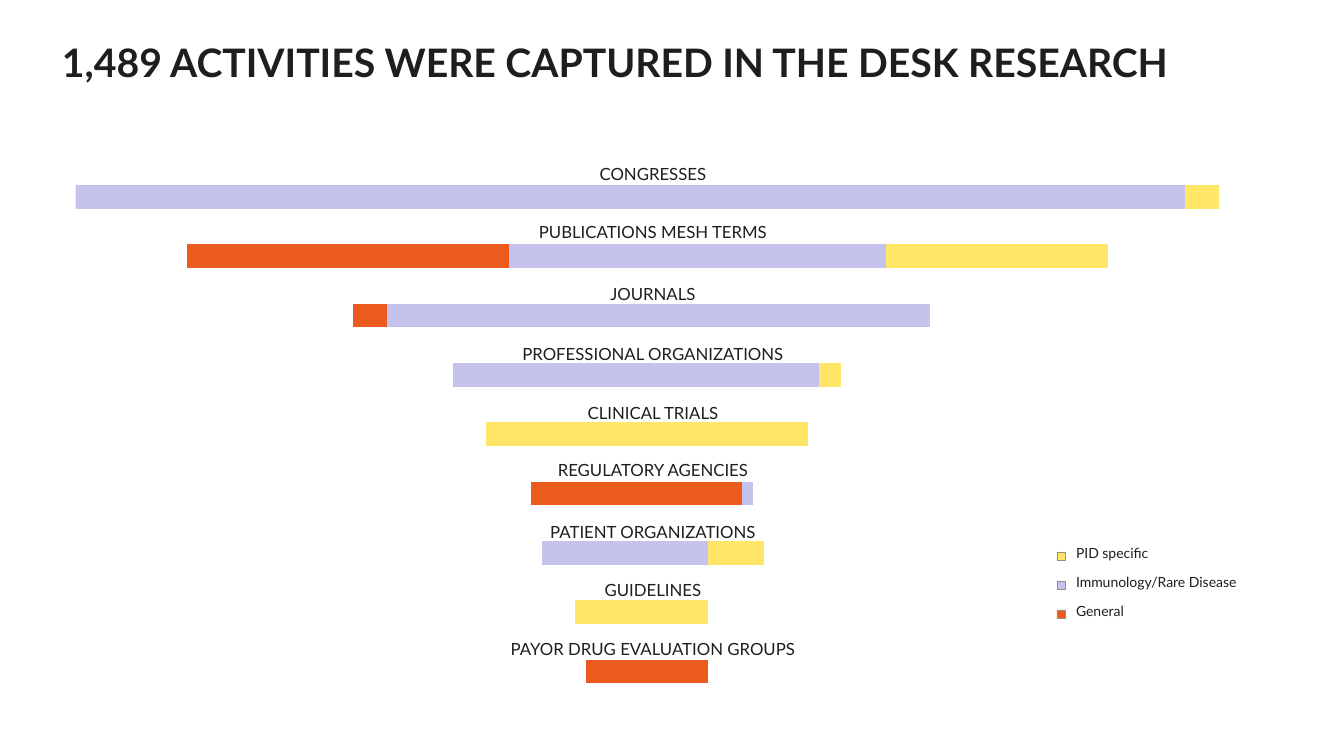
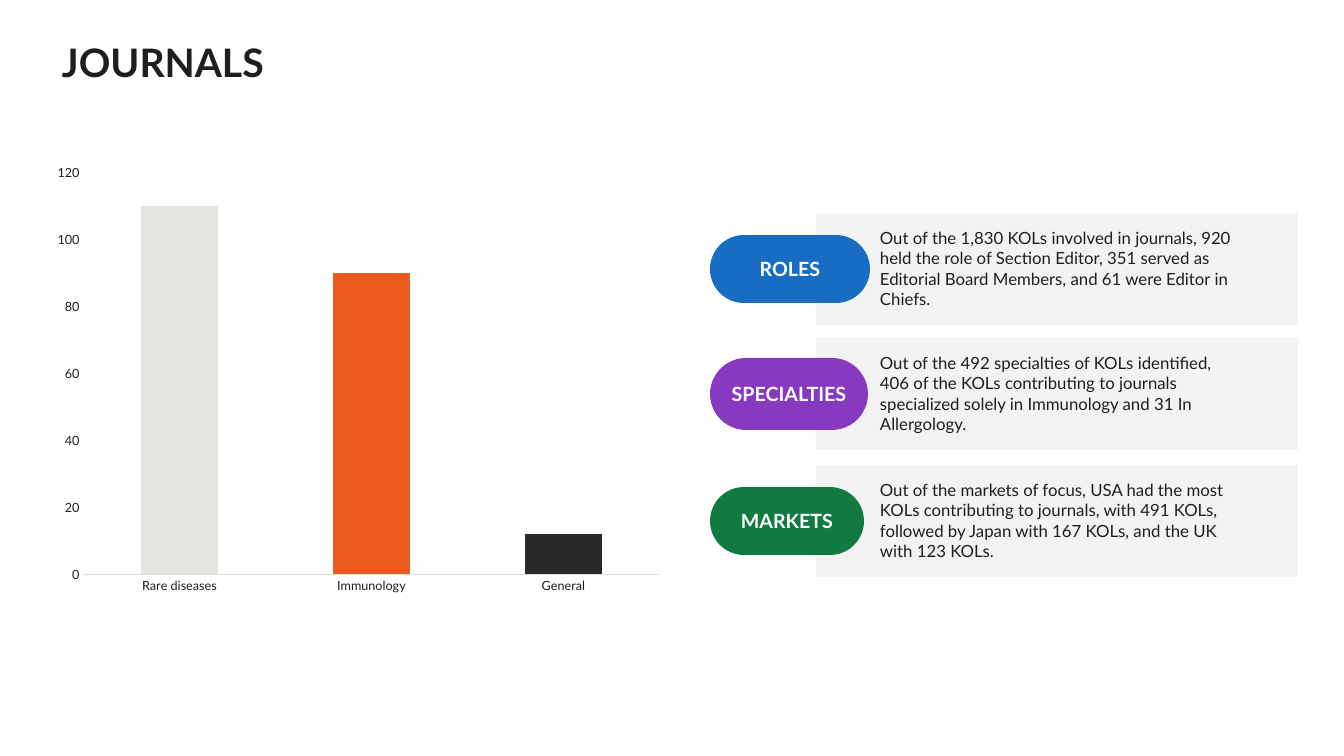
import pptx
import pptx.chart.data
import pptx.dml.color
import pptx.enum.chart
import pptx.enum.shapes
import pptx.enum.text
import pptx.oxml
import pptx.util

RGB = pptx.dml.color.RGBColor
INK = RGB(0x1E, 0x1E, 0x1C)
WHITE = RGB(0xFF, 0xFF, 0xFF)
ORANGE = RGB(0xEB, 0x5B, 0x1D)
LILAC = RGB(0xC5, 0xC3, 0xEE)
YELLOW = RGB(0xFF, 0xE6, 0x67)
STONE = RGB(0xE5, 0xE3, 0xDE)
COAL = RGB(0x29, 0x29, 0x29)
RULE = RGB(0xDE, 0xDE, 0xDC)
EDGE = RGB(0x91, 0x91, 0x8A)
CARD = RGB(0xF3, 0xF3, 0xF3)
BLUE = RGB(0x18, 0x6D, 0xC3)
PURPLE = RGB(0x87, 0x3A, 0xC0)
GREEN = RGB(0x10, 0x7A, 0x40)

FONT = "Lato"
PX = 914400 / 100.8
Pt = pptx.util.Pt
SHAPE = pptx.enum.shapes.MSO_SHAPE
KIND = pptx.enum.chart.XL_CHART_TYPE
TICK = pptx.enum.chart.XL_TICK_MARK
LEFT = pptx.enum.text.PP_ALIGN.LEFT
MID = pptx.enum.text.PP_ALIGN.CENTER


def add(slide, at, kind=None, fill=None):
    """Add a plain shape, or a text box when no kind is given; at is in px."""
    at = [round(n * PX) for n in at]
    if kind is None:
        return slide.shapes.add_textbox(*at)
    shape = slide.shapes.add_shape(kind, *at)
    shape.shadow.inherit = False
    shape.fill.solid()
    shape.fill.fore_color.rgb = fill
    shape.line.fill.background()
    return shape


def write(shape, text, size, color=INK, bold=False, align=LEFT, inset=(0, 0), middle=True):
    """Write one paragraph; inset is (sides, top and bottom) in px."""
    frame = shape.text_frame
    frame.word_wrap = True
    frame.margin_left = frame.margin_right = round(inset[0] * PX)
    frame.margin_top = frame.margin_bottom = round(inset[1] * PX)
    anchor = pptx.enum.text.MSO_ANCHOR
    frame.vertical_anchor = anchor.MIDDLE if middle else anchor.TOP
    para = frame.paragraphs[0]
    para.alignment = align
    run = para.add_run()
    run.text = text
    run.font.name, run.font.size, run.font.bold = FONT, Pt(size), bold
    run.font.color.rgb = color
    return para


deck = pptx.Presentation()
deck.slide_width, deck.slide_height = round(1344 * PX), round(756 * PX)

# Charts and titles, the same way on both slides
# label, middle of label, general, immunology, PID, blank on each side
rows = [
    ("CONGRESSES", 174, 0, 100, 3, 0),
    ("PUBLICATIONS MESH TERMS", 232, 29, 34, 20, 10),
    ("JOURNALS", 294, 3, 49, 0, 25),
    ("PROFESSIONAL ORGANIZATIONS", 354, 0, 33, 2, 34),
    ("CLINICAL TRIALS", 413, 0, 0, 29, 37),
    ("REGULATORY AGENCIES", 470, 19, 1, 0, 41),
    ("PATIENT ORGANIZATIONS", 532, 0, 15, 5, 42),
    ("GUIDELINES", 590, 0, 0, 12, 45),
    ("PAYOR DRUG EVALUATION GROUPS", 649, 11, 0, 0, 46),
]
funnel = [[row[col] for row in reversed(rows)] for col in (5, 2, 3, 4, 5)]
pages = [
    ("1,489 ACTIVITIES WERE CAPTURED IN THE DESK RESEARCH", KIND.BAR_STACKED,
     (62, 156, 1266, 582), [str(n + 1) for n in range(len(rows))], funnel,
     [WHITE, ORANGE, LILAC, YELLOW, WHITE], 110),
    ("JOURNALS", KIND.COLUMN_STACKED, (45, 156, 627, 447),
     ["Rare diseases", "Immunology", "General"], [[110, 90, 12]], [STONE], 120),
]
slides, charts = [], []
for title, kind, at, cats, sets, colors, top in pages:
    slide = deck.slides.add_slide(deck.slide_layouts[6])
    data = pptx.chart.data.CategoryChartData()
    data.categories = cats
    for num, vals in enumerate(sets, 1):
        data.add_series(f"Series {num}", vals)
    chart = slide.shapes.add_chart(kind, *[round(n * PX) for n in at], data).chart
    chart.has_legend = chart.has_title = False
    chart.font.name, chart.font.size = FONT, Pt(10)
    chart.font.color.rgb = INK
    plot = chart.plots[0]
    plot.gap_width, plot.overlap, plot.vary_by_categories = 150, 100, False
    for series, color in zip(plot.series, colors):
        series.format.fill.solid()
        series.format.fill.fore_color.rgb = color
    axis = chart.value_axis
    axis.minimum_scale, axis.maximum_scale = 0, top
    axis.has_major_gridlines = False
    para = write(add(slide, (52, 25, 1266, 79)), title, 28, bold=True, inset=(10, 5))
    para.line_spacing = 0.9
    slides.append(slide)
    charts.append(chart)

# Slide 1: funnel without axes, in a fixed plot area
slide, chart = slides[0], charts[0]
chart.category_axis.visible = chart.value_axis.visible = False
area = chart.element.xpath("c:chart/c:plotArea")[0]
for old in area.xpath("c:layout"):
    area.remove(old)
spots = "".join(f'<c:{tag} val="{val}"/>' for tag, val in [
    ("layoutTarget", "inner"), ("xMode", "edge"), ("yMode", "edge"),
    ("x", 0.011), ("y", 0.019), ("w", 0.964), ("h", 0.918)])
area.insert(0, pptx.oxml.parse_xml(
    '<c:layout xmlns:c="http://schemas.openxmlformats.org/drawingml/2006/chart">'
    f"<c:manualLayout>{spots}</c:manualLayout></c:layout>"))

for label, y, *rest in rows:
    write(add(slide, (478, y - 14, 350, 28)), label, 12, align=MID)

# Legend
keys = [("PID specific", YELLOW), ("Immunology/Rare Disease", LILAC), ("General", ORANGE)]
for num, (label, color) in enumerate(keys):
    y = 536 + num * 29
    box = add(slide, (1057, y + 16, 8, 8), SHAPE.RECTANGLE, color)
    box.line.color.rgb = EDGE
    box.line.width = Pt(0.25)
    write(add(slide, (1052, y, 213, 41)), label, 10, inset=(24, 12), middle=False)

# Slide 2: column chart
slide, chart = slides[1], charts[1]
for num, color in enumerate([STONE, ORANGE, COAL]):
    fill = chart.plots[0].series[0].points[num].format.fill
    fill.solid()
    fill.fore_color.rgb = color
for axis in (chart.category_axis, chart.value_axis):
    axis.major_tick_mark = axis.minor_tick_mark = TICK.NONE
    font = axis.tick_labels.font
    font.name, font.size = FONT, Pt(9)
    font.color.rgb = INK
chart.value_axis.major_unit = 20
chart.value_axis.format.line.fill.background()
line = chart.category_axis.format.line
line.color.rgb = RULE
line.width = Pt(0.75)

# Cards, each with a pill centred on its height
cards = [
    ("ROLES", BLUE, 213, 160, 68,
     "Out of the 1,830 KOLs involved in journals, 920 held the role of Section Editor, "
     "351 served as Editorial Board Members, and 61 were Editor in Chiefs."),
    ("SPECIALTIES", PURPLE, 338, 158, 72,
     "Out of the 492 specialties of KOLs identified, 406 of the KOLs contributing to "
     "journals specialized solely in Immunology and 31 In Allergology."),
    ("MARKETS", GREEN, 465, 154, 68,
     "Out of the markets of focus, USA had the most KOLs contributing to journals, with "
     "491 KOLs, followed by Japan with 167 KOLs, and the UK with 123 KOLs."),
]
for name, color, y, wide, high, text in cards:
    add(slide, (816, y, 482, 112), SHAPE.RECTANGLE, CARD)
    pill = add(slide, (710, y + 56 - high // 2, wide, high), SHAPE.ROUNDED_RECTANGLE, color)
    pill.adjustments[0] = 0.5
    write(pill, name, 14, WHITE, True, MID, (10, 10))
    write(add(slide, (880, y + 15, 357, 82)), text, 12, middle=False)

deck.save("out.pptx")
